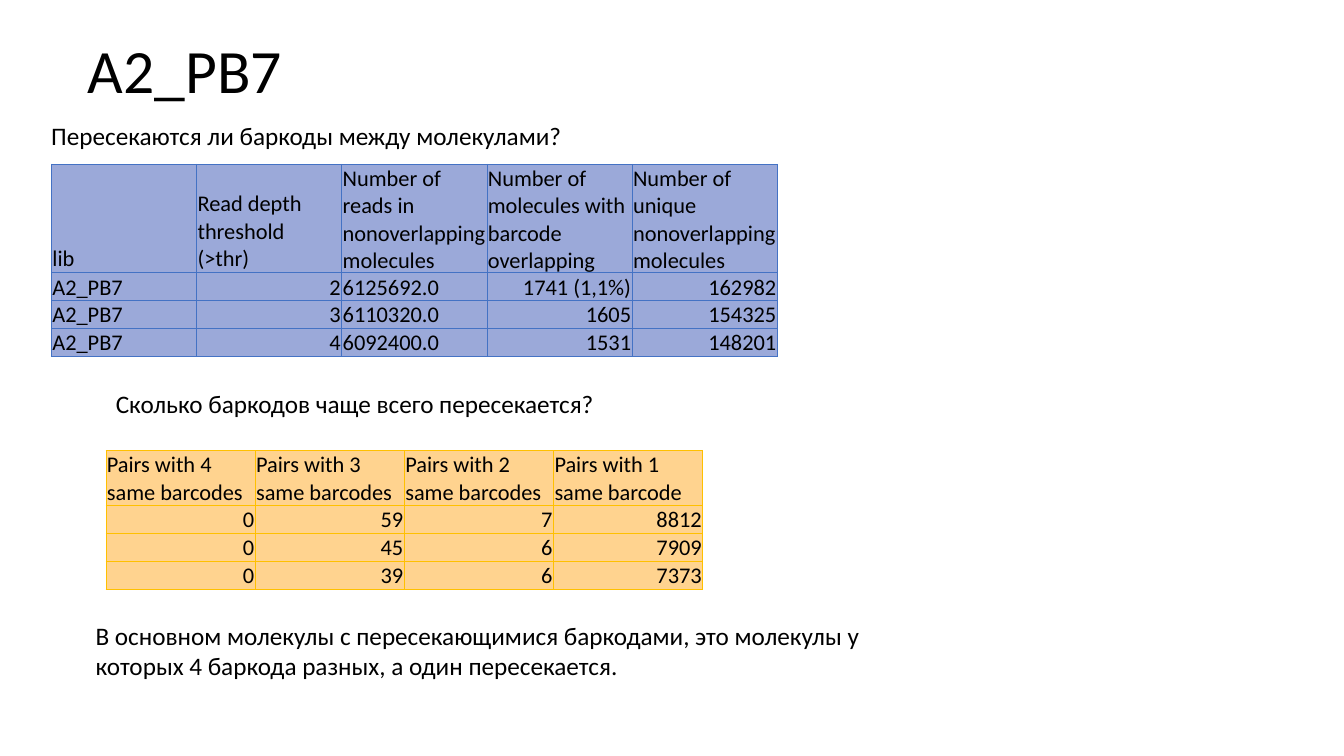
from dataclasses import dataclass

from lxml import etree
from pptx import Presentation
from pptx.dml.color import RGBColor
from pptx.enum import text
from pptx.oxml import ns
from pptx.util import Emu, Pt

PX = 9144  # EMU; 100 px to the inch
FONT = "Calibri"
BLACK = "000000"


@dataclass(frozen=True)
class Label:
    left: int
    top: int
    width: int
    height: int
    words: str


@dataclass(frozen=True)
class Grid:
    left: int
    top: int
    height: int
    column_width: int
    fill: str
    border: str
    text_columns: tuple[int, ...]  # left-aligned below the header
    rows: tuple[tuple[str, ...], ...]


LABELS = (
    Label(41, 114, 577, 40, "Пересекаются ли баркоды между молекулами?"),
    Label(105, 380, 612, 40, "Сколько баркодов чаще всего пересекается?"),
    Label(85, 610, 850, 71, "В основном молекулы с пересекающимися баркодами, это молекулы у "
          "которых 4 баркода разных, а один пересекается."),
)

GRIDS = (
    Grid(51, 163, 190, 144, "9BA9D9", "4472C4", (0, 2), (
        ("lib", "Read depth threshold (>thr)", "Number of reads in nonoverlapping molecules",
         "Number of molecules with barcode overlapping",
         "Number of unique nonoverlapping molecules"),
        ("A2_PB7", "2", "6125692.0", "1741 (1,1%)", "162982"),
        ("A2_PB7", "3", "6110320.0", "1605", "154325"),
        ("A2_PB7", "4", "6092400.0", "1531", "148201"),
    )),
    Grid(105, 447, 137, 148, "FFD38F", "FFC000", (), (
        ("Pairs with 4 same barcodes", "Pairs with 3 same barcodes",
         "Pairs with 2 same barcodes", "Pairs with 1 same barcode"),
        ("0", "59", "7", "8812"),
        ("0", "45", "6", "7909"),
        ("0", "39", "6", "7373"),
    )),
)


def px(length: int) -> Emu:
    return Emu(length * PX)


def color(value: str) -> RGBColor:
    return RGBColor.from_string(value)


def write(para, words: str, size: int, align=text.PP_ALIGN.LEFT) -> None:
    para.alignment = align
    span = para.add_run()
    span.text = words
    span.font.name = FONT
    span.font.size = Pt(size)
    span.font.bold = False
    span.font.color.rgb = color(BLACK)


def add_title(page, words: str) -> None:
    title = page.shapes.title
    title.left, title.top, title.width, title.height = px(77), px(0), px(1150), px(145)
    frame = title.text_frame
    frame.vertical_anchor = text.MSO_ANCHOR.MIDDLE
    frame.paragraphs[0].line_spacing = 0.9
    write(frame.paragraphs[0], words, 44)


def add_label(page, label: Label) -> None:
    box = page.shapes.add_textbox(px(label.left), px(label.top), px(label.width), px(label.height))
    frame = box.text_frame
    frame.word_wrap = True
    frame.auto_size = text.MSO_AUTO_SIZE.SHAPE_TO_FIT_TEXT
    write(frame.paragraphs[0], label.words, 18)


def add_borders(cell, border: str) -> None:
    """Line all four sides; the lines must come before the fill in the XML."""
    properties = cell._tc.get_or_add_tcPr()
    for index, side in enumerate(("a:lnL", "a:lnR", "a:lnT", "a:lnB")):
        line = etree.Element(ns.qn(side), w=str(Pt(0.5)))
        fill = etree.SubElement(line, ns.qn("a:solidFill"))
        etree.SubElement(fill, ns.qn("a:srgbClr"), val=border)
        properties.insert(index, line)


def add_grid(page, grid: Grid) -> None:
    row_count, column_count = len(grid.rows), len(grid.rows[0])
    holder = page.shapes.add_table(row_count, column_count, px(grid.left), px(grid.top),
                                   px(grid.column_width * column_count), px(20 * row_count))
    holder.height = px(grid.height)  # rows grow to fit their text
    table = holder.table
    table.first_row = table.horz_banding = False
    for row, values in enumerate(grid.rows):
        for column, value in enumerate(values):
            cell = table.cell(row, column)
            cell.margin_left = cell.margin_right = cell.margin_top = px(1)
            cell.margin_bottom = 0
            cell.vertical_anchor = text.MSO_ANCHOR.BOTTOM
            cell.fill.solid()
            cell.fill.fore_color.rgb = color(grid.fill)
            add_borders(cell, grid.border)
            on_left = row == 0 or column in grid.text_columns
            align = text.PP_ALIGN.LEFT if on_left else text.PP_ALIGN.RIGHT
            write(cell.text_frame.paragraphs[0], value, 16, align)


def main() -> None:
    deck = Presentation()
    deck.slide_width, deck.slide_height = px(1333), px(750)
    page = deck.slides.add_slide(deck.slide_layouts.get_by_name("Title Only"))
    add_title(page, "A2_PB7")
    for label in LABELS:
        add_label(page, label)
    for grid in GRIDS:
        add_grid(page, grid)
    deck.save("out.pptx")


if __name__ == "__main__":
    main()
